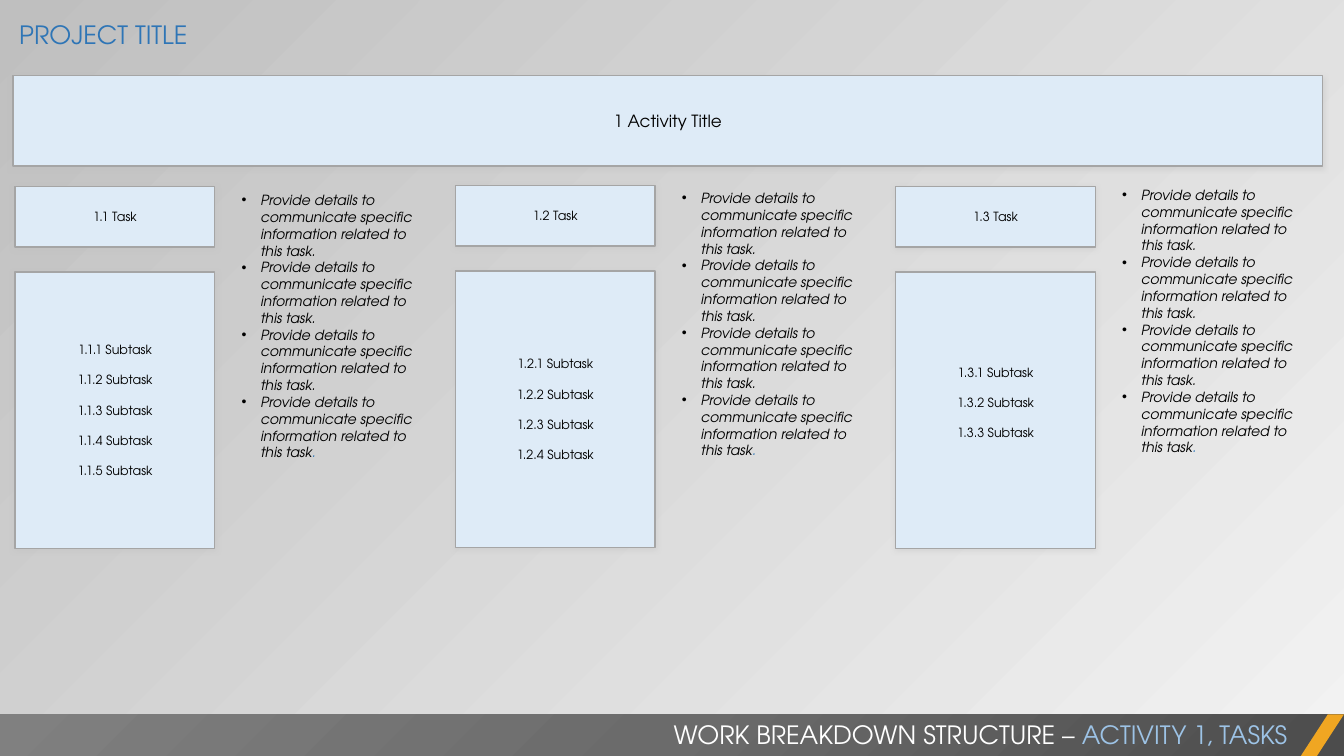
from lxml import etree
from pptx import Presentation
from pptx.dml.color import RGBColor
from pptx.enum.shapes import MSO_SHAPE
from pptx.enum.text import MSO_ANCHOR, MSO_AUTO_SIZE, PP_ALIGN
from pptx.oxml import parse_xml
from pptx.oxml.ns import qn
from pptx.util import Pt

RECTANGLE = MSO_SHAPE.RECTANGLE
PARALLELOGRAM = MSO_SHAPE.PARALLELOGRAM
TOP, MIDDLE = MSO_ANCHOR.TOP, MSO_ANCHOR.MIDDLE
LEFT, CENTER, RIGHT = PP_ALIGN.LEFT, PP_ALIGN.CENTER, PP_ALIGN.RIGHT
NO_FIT = MSO_AUTO_SIZE.NONE

BLACK = RGBColor(0x00, 0x00, 0x00)
WHITE = RGBColor(0xFF, 0xFF, 0xFF)
BLUE = RGBColor(0x2E, 0x75, 0xB6)
SKY = RGBColor(0x9D, 0xC3, 0xE6)
PALE_BLUE = RGBColor(0xDE, 0xEB, 0xF7)
GRAY = RGBColor(0xA5, 0xA5, 0xA5)
ORANGE = RGBColor(0xF0, 0xA6, 0x22)
SILVER = RGBColor(0xBF, 0xBF, 0xBF)
MIST = RGBColor(0xF2, 0xF2, 0xF2)
BAR_STOPS = (
    (0, RGBColor(0x4C, 0x4C, 0x4C)),
    (50, RGBColor(0x6B, 0x6B, 0x6B)),
    (100, RGBColor(0x80, 0x80, 0x80)),
)

FONT = "TeX Gyre Adventor"
DRAWING = "http://schemas.openxmlformats.org/drawingml/2006/main"
COLUMN_PITCH = 314.5
SUBTASK_GAP = 10.8
DETAIL = "Provide details to communicate specific information related to this task"
TASKS = (
    {"subtasks": 5, "top": 133.2, "details_top": 133.2, "bottom_inset": 3.6, "placeholder": 1},
    {"subtasks": 4, "top": 132.5, "details_top": 131.8, "bottom_inset": 3.6, "placeholder": 2},
    {"subtasks": 3, "top": 133.2, "details_top": 129.6, "bottom_inset": 14.4, "placeholder": 4},
)


class SlideBuilder:
    def __init__(self, page):
        self.page = page

    def apply(self, target, values):
        for name, value in values.items():
            setattr(target, name, value)

    def fill_text(self, box, lines, size, align, anchor, gap=0, italic=False):
        frame = box.text_frame
        self.apply(frame, {"word_wrap": True, "auto_size": NO_FIT, "vertical_anchor": anchor})
        for index, line in enumerate(lines):
            para = frame.add_paragraph() if index else frame.paragraphs[0]
            self.apply(para, {
                "alignment": align,
                "space_before": Pt(gap if index else 0),
                "space_after": Pt(0),
            })
            for text, color in line:
                span = para.add_run()
                span.text = text
                self.apply(span.font, {
                    "name": FONT, "size": Pt(size), "bold": False, "italic": italic,
                })
                span.font.color.rgb = color

    def place(self, box, left, top, width, height):
        self.apply(box, {
            "left": Pt(left), "top": Pt(top), "width": Pt(width), "height": Pt(height),
        })

    def background(self):
        fill = self.page.background.fill
        fill.gradient()
        fill.gradient_angle = 135
        for stop, color in zip(fill.gradient_stops, (MIST, SILVER)):
            stop.color.rgb = color

    def shape(self, kind, frame, color):
        box = self.page.shapes.add_shape(kind, *map(Pt, frame))
        box.shadow.inherit = False
        box.fill.solid()
        box.fill.fore_color.rgb = color
        box.line.fill.background()
        return box

    def card(self, frame, lines, size, gap=0, bottom_inset=3.6):
        box = self.shape(RECTANGLE, frame, PALE_BLUE)
        box.line.color.rgb = GRAY
        box.line.width = Pt(1)
        box.text_frame.margin_bottom = Pt(bottom_inset)
        effects = box._element.spPr.find(qn("a:effectLst"))
        effects.append(parse_xml(
            f'<a:outerShdw xmlns:a="{DRAWING}" blurRad="{Pt(4)}" dist="{Pt(1)}" '
            f'dir="5400000" algn="t" rotWithShape="0"><a:srgbClr val="{SILVER}">'
            '<a:alpha val="40000"/></a:srgbClr></a:outerShdw>'))
        self.fill_text(box, [[(line, BLACK)] for line in lines], size, CENTER, MIDDLE, gap)

    def gradient_bar(self, frame, stops):
        box = self.shape(RECTANGLE, frame, GRAY)
        stop_list = "".join(
            f'<a:gs pos="{position * 1000}"><a:srgbClr val="{color}"/></a:gs>'
            for position, color in stops)
        gradient = parse_xml(
            f'<a:gradFill xmlns:a="{DRAWING}" rotWithShape="1"><a:gsLst>{stop_list}</a:gsLst>'
            '<a:path path="circle"><a:fillToRect l="100000" t="100000"/></a:path></a:gradFill>')
        properties = box._element.spPr
        properties.replace(properties.find(qn("a:solidFill")), gradient)

    def title(self, frame, text):
        box = self.page.shapes.title
        self.place(box, *frame)
        self.fill_text(box, [[(text, BLUE)]], 18, LEFT, TOP)

    def label(self, frame, spans):
        box = self.page.shapes.add_textbox(*map(Pt, frame))
        self.fill_text(box, [spans], 18, RIGHT, TOP)

    def details(self, placeholder, frame, lines):
        box = self.page.placeholders[placeholder]
        self.place(box, *frame)
        self.fill_text(box, lines, 10, LEFT, TOP, italic=True)
        for para in box.text_frame.paragraphs:
            properties = para._p.get_or_add_pPr()
            properties.set("marL", str(Pt(13.5)))
            properties.set("indent", str(Pt(-13.5)))
            etree.SubElement(properties, qn("a:buFont")).set("typeface", "Arial")
            etree.SubElement(properties, qn("a:buChar")).set("char", "•")

    def remove_empty(self):
        for box in list(self.page.placeholders):
            if not box.text_frame.text:
                box._element.getparent().remove(box._element)


def main():
    deck = Presentation()
    deck.slide_width, deck.slide_height = Pt(960), Pt(540)
    builder = SlideBuilder(deck.slides.add_slide(deck.slide_layouts[4]))
    builder.background()
    builder.title((6.5, 10, 728, 29), "PROJECT TITLE")
    builder.card((9.4, 54, 935.3, 64.5), ["1 Activity Title"], 12)

    detail_lines = [[(DETAIL + ".", BLACK)]] * 3 + [[(DETAIL, BLACK), (".", BLUE)]]
    for index, task in enumerate(TASKS):
        offset = index * COLUMN_PITCH
        number = f"1.{index + 1}"
        left, top = 10.8 + offset, task["top"]
        subtasks = [f"{number}.{item + 1} Subtask" for item in range(task["subtasks"])]
        builder.card((left, top, 142.6, 43.2), [f"{number} Task"], 9)
        builder.card((left, top + 61.2, 142.6, 197.3), subtasks, 9,
                     SUBTASK_GAP, task["bottom_inset"])
        builder.details(task["placeholder"],
                        (165.4 + offset, task["details_top"], 148.3, 216), detail_lines)

    builder.gradient_bar((0, 510.3, 960, 30), BAR_STOPS)
    accent = builder.shape(PARALLELOGRAM, (929, 510.3, 31, 30), ORANGE)
    accent.adjustments[0] = 0.65
    builder.label((378, 510, 548.6, 29),
                  [("WORK BREAKDOWN STRUCTURE – ", WHITE), ("ACTIVITY 1, TASKS", SKY)])
    builder.remove_empty()
    deck.save("out.pptx")


if __name__ == "__main__":
    main()
